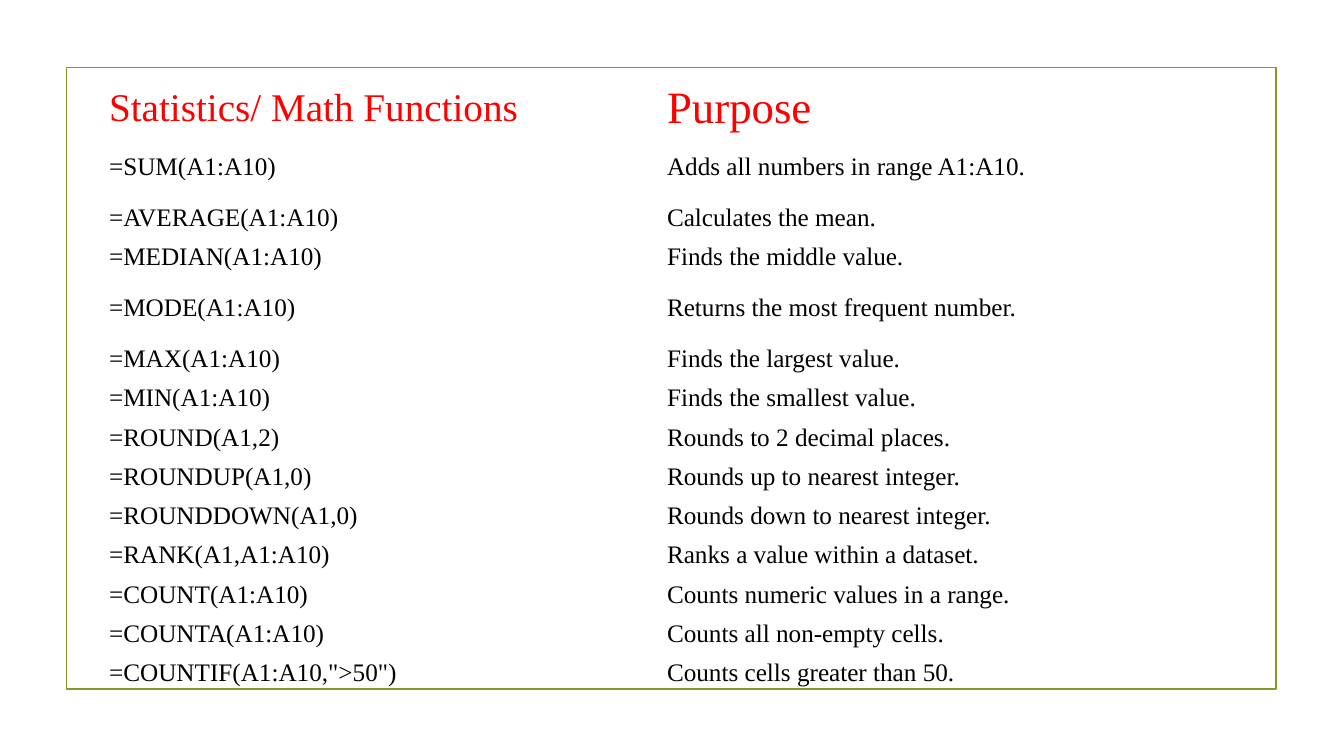
from pptx import Presentation
from pptx.dml.color import RGBColor
from pptx.enum.shapes import MSO_SHAPE as Shape
from pptx.enum.text import MSO_ANCHOR as Anchor
from pptx.oxml.ns import qn
from pptx.util import Cm, Pt

FONT = "Times New Roman"
NO_GRID_STYLE = "{2D5ABB26-0587-4C30-8999-92F81FD0307C}"
HEADER_HEIGHT, TALL_HEIGHT, ROW_HEIGHT = 1.42, 1.57, 0.99
TALL_FUNCTIONS = ("=SUM(A1:A10)", "=MODE(A1:A10)")

HEADERS = [("Statistics/ Math Functions", 28), ("Purpose", 32)]
FUNCTIONS = [
    ("=SUM(A1:A10)", "Adds all numbers in range A1:A10."),
    ("=AVERAGE(A1:A10)", "Calculates the mean."),
    ("=MEDIAN(A1:A10)", "Finds the middle value."),
    ("=MODE(A1:A10)", "Returns the most frequent number."),
    ("=MAX(A1:A10)", "Finds the largest value."),
    ("=MIN(A1:A10)", "Finds the smallest value."),
    ("=ROUND(A1,2)", "Rounds to 2 decimal places."),
    ("=ROUNDUP(A1,0)", "Rounds up to nearest integer."),
    ("=ROUNDDOWN(A1,0)", "Rounds down to nearest integer."),
    ("=RANK(A1,A1:A10)", "Ranks a value within a dataset."),
    ("=COUNT(A1:A10)", "Counts numeric values in a range."),
    ("=COUNTA(A1:A10)", "Counts all non-empty cells."),
    ("=COUNTIF(A1:A10,\">50\")", "Counts cells greater than 50."),
]


def color(value):
    return RGBColor.from_string(value)


def add_frame(page, left, top, width, height):
    frame = page.shapes.add_shape(Shape.RECTANGLE, Cm(left), Cm(top), Cm(width), Cm(height))
    frame.shadow.inherit = False
    frame.fill.background()
    frame.line.color.rgb = color("83992A")
    frame.line.width = Pt(1.25)


def fill_cell(cell, text, size, text_color):
    cell.fill.background()
    cell.vertical_anchor = Anchor.MIDDLE
    cell.margin_left = cell.margin_right = Cm(0.16)
    cell.margin_top = cell.margin_bottom = Cm(0.08)
    para = cell.text_frame.paragraphs[0]
    para.text = text
    font = para.runs[0].font
    font.name, font.size = FONT, Pt(size)
    font.color.rgb = color(text_color)


def add_function_table(page, left, top, width):
    heights = [HEADER_HEIGHT] + [
        TALL_HEIGHT if function in TALL_FUNCTIONS else ROW_HEIGHT
        for function, purpose in FUNCTIONS
    ]
    table = page.shapes.add_table(
        len(heights), len(HEADERS), Cm(left), Cm(top), Cm(width), Cm(sum(heights))
    ).table
    table.first_row = table.horz_banding = False
    table._tbl.tblPr.find(qn("a:tableStyleId")).text = NO_GRID_STYLE
    for row, height in zip(table.rows, heights):
        row.height = Cm(height)
    for column, (header, size) in enumerate(HEADERS):
        fill_cell(table.cell(0, column), header, size, "FF0000")
        for row, texts in enumerate(FUNCTIONS, start=1):
            fill_cell(table.cell(row, column), texts[column], 18, "000000")


def add_functions_slide(deck):
    page = deck.slides.add_slide(deck.slide_layouts[6])
    left, top, width, height = 1.68, 1.7, 30.48, 15.67
    add_frame(page, left, top, width, height)
    add_function_table(page, left + 0.91, top + 0.31, width - 2.36)


def main():
    deck = Presentation()
    deck.slide_width, deck.slide_height = Cm(33.87), Cm(19.05)
    add_functions_slide(deck)
    deck.save("out.pptx")


if __name__ == "__main__":
    main()
